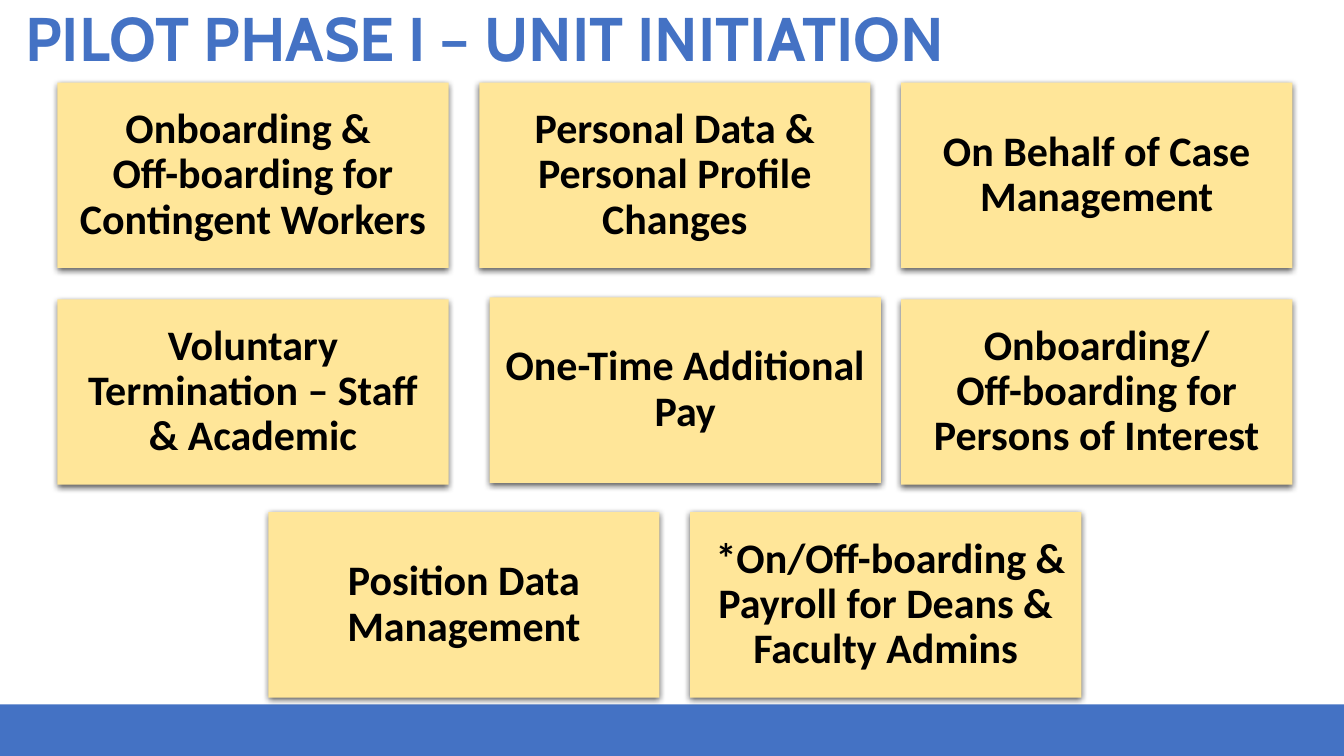
from dataclasses import dataclass

from lxml import etree
from pptx import Presentation
from pptx.dml.color import RGBColor
from pptx.enum.shapes import MSO_SHAPE
from pptx.enum.text import MSO_ANCHOR, MSO_AUTO_SIZE, PP_ALIGN
from pptx.oxml.ns import qn
from pptx.util import Pt


@dataclass(frozen=True)
class Theme:
    blue: RGBColor = RGBColor(0x44, 0x72, 0xC4)
    yellow: RGBColor = RGBColor(0xFF, 0xE6, 0x99)
    black: RGBColor = RGBColor(0, 0, 0)
    title_font: str = "Cabin"
    card_font: str = "Calibri"
    title_size: int = 44
    card_size: int = 30


theme = Theme()


def add_box(s, x, y, w, h, color):
    sp = s.shapes.add_shape(MSO_SHAPE.RECTANGLE, Pt(x), Pt(y), Pt(w), Pt(h))
    sp.shadow.inherit = False
    sp.fill.solid()
    sp.fill.fore_color.rgb = color
    sp.line.fill.background()
    return sp


def format_text(tf, align, font, size, color):
    tf.word_wrap = True
    tf.auto_size = MSO_AUTO_SIZE.NONE
    for p in tf.paragraphs:
        p.alignment = align
        p.line_spacing = 0.9
        p.space_before = Pt(0)
        for r in p.runs:
            r.font.name = font
            r.font.size = Pt(size)
            r.font.bold = True
            r.font.color.rgb = color


prs = Presentation()
prs.slide_width, prs.slide_height = Pt(960), Pt(540)
s = prs.slides.add_slide(prs.slide_layouts[5])

add_box(s, 0, 503.2, 960, 36.8, theme.blue)

title = s.shapes.title
title.left, title.top, title.width, title.height = Pt(10.8), Pt(2.2), Pt(935), Pt(69)
tf = title.text_frame
tf.text = "PILOT PHASE I – UNIT INITIATION"
tf.vertical_anchor = MSO_ANCHOR.TOP
format_text(tf, PP_ALIGN.LEFT, theme.title_font, theme.title_size, theme.blue)

card_w, card_h = 279.4, 132.5
left, pitch = 41, 301.35
rows = [
    (59, 0, [
        "Onboarding & \vOff-boarding for Contingent Workers",
        "Personal Data & Personal Profile Changes",
        "On Behalf of Case Management",
    ]),
    (213.8, 0, [
        "Voluntary Termination – Staff & Academic",
        "One-Time Additional Pay",
        "Onboarding/\vOff-boarding for Persons of Interest",
    ]),
    (365.8, 0.5, [
        "Position Data Management",
        " *On/Off-boarding & Payroll for Deans & Faculty Admins",
    ]),
]
nudges = {"One-Time Additional Pay": (7.4, -1.4)}

for top, shift, labels in rows:
    for col, label in enumerate(labels):
        dx, dy = nudges.get(label, (0, 0))
        x = left + (col + shift) * pitch + dx
        sp = add_box(s, x, top + dy, card_w, card_h, theme.yellow)

        effects = sp.element.spPr.find(qn("a:effectLst"))
        shadow = etree.SubElement(
            effects, qn("a:outerShdw"), blurRad=str(Pt(4.5)), dist=str(Pt(1.5)),
            dir="5400000", algn="ctr", rotWithShape="0")
        black = etree.SubElement(shadow, qn("a:srgbClr"), val=str(theme.black))
        etree.SubElement(black, qn("a:alpha"), val="63000")

        tf = sp.text_frame
        tf.text = label
        tf.vertical_anchor = MSO_ANCHOR.MIDDLE
        tf.margin_left = tf.margin_right = tf.margin_top = tf.margin_bottom = Pt(9)
        format_text(tf, PP_ALIGN.CENTER, theme.card_font, theme.card_size, theme.black)

prs.save("out.pptx")
